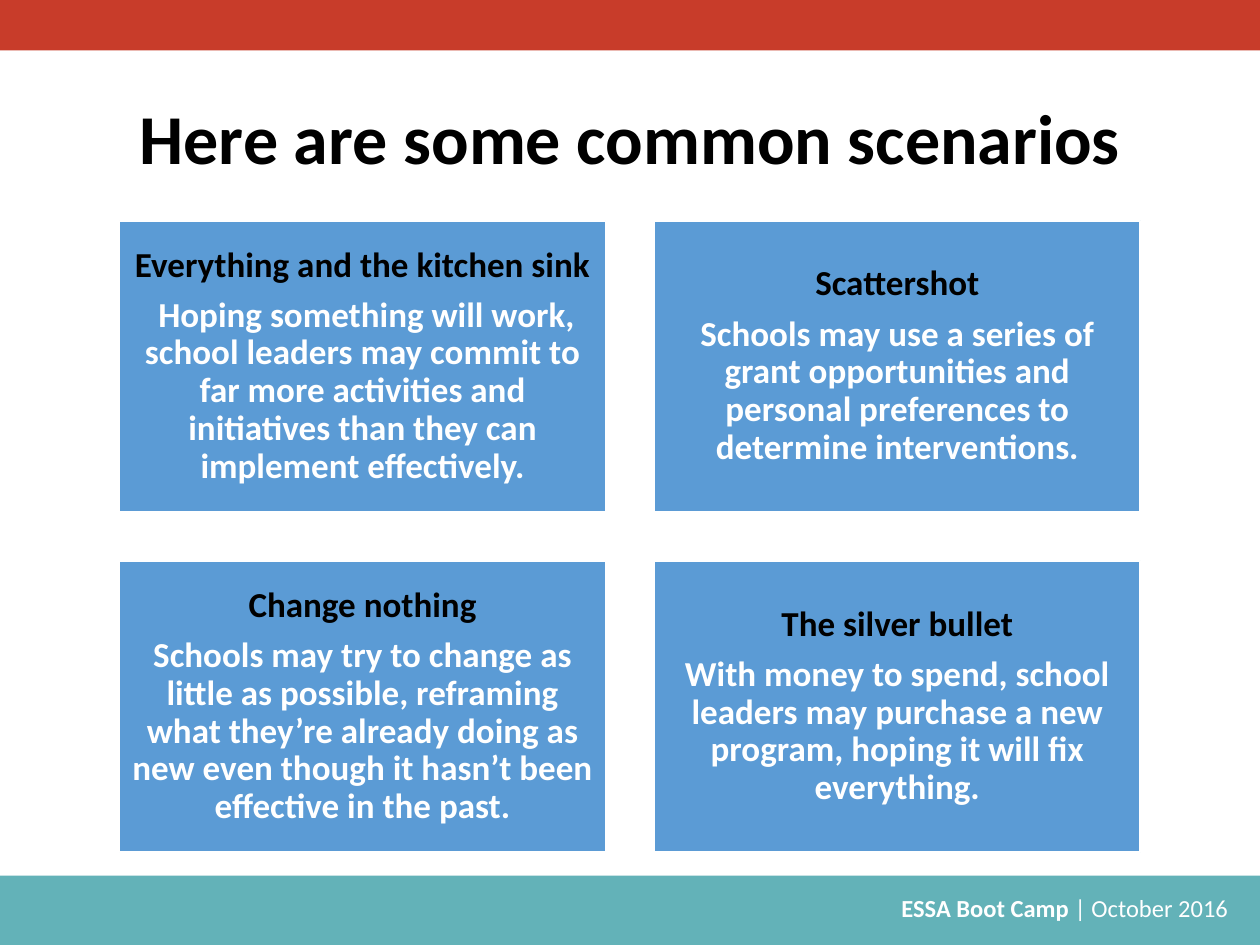
from pptx import Presentation
from pptx.dml.color import RGBColor
from pptx.enum.shapes import MSO_SHAPE
from pptx.enum.text import MSO_ANCHOR, PP_ALIGN
from pptx.util import Cm, Pt

RECT = MSO_SHAPE.RECTANGLE
MIDDLE, TOP = MSO_ANCHOR.MIDDLE, MSO_ANCHOR.TOP
CENTER, RIGHT = PP_ALIGN.CENTER, PP_ALIGN.RIGHT

# Content
TITLE = "Here are some common scenarios"
FOOTER = ("ESSA Boot Camp ", "| October 2016 ")
CARDS = [
    ("Everything and the kitchen sink",
     " Hoping something will work, school leaders may commit to far more "
     "activities and initiatives than they can implement effectively."),
    ("Scattershot",
     "Schools may use a series of grant opportunities and personal "
     "preferences to determine interventions."),
    ("Change nothing",
     "Schools may try to change as little as possible, reframing what they’re "
     "already doing as new even though it hasn’t been effective in the past."),
    ("The silver bullet",
     "With money to spend, school leaders may purchase a new program, "
     "hoping it will fix everything."),
]

THEME = {
    "font": "Calibri",
    "black": RGBColor(0x00, 0x00, 0x00),
    "white": RGBColor(0xFF, 0xFF, 0xFF),
    "red": RGBColor(0xC8, 0x3C, 0x2A),
    "teal": RGBColor(0x63, 0xB2, 0xB8),
    "blue": RGBColor(0x5B, 0x9B, 0xD5),
    "title": Pt(40),
    "body": Pt(20),
    "small": Pt(14),
}

# Layout in centimetres
WIDE, HIGH = 25.4, 19.05
COLS = 2
LEFT, UPPER = 2.41, 4.45
CARD_W, CARD_H = 9.8, 5.87
GAP_X, GAP_Y = 0.98, 0.99
INSET = 0.2


def add_bar(slide, box, color):
    bar = slide.shapes.add_shape(RECT, *map(Cm, box))
    bar.shadow.inherit = False
    bar.fill.solid()
    bar.fill.fore_color.rgb = THEME[color]
    bar.line.fill.background()
    return bar


def add_box(slide, box, anchor):
    frame = slide.shapes.add_textbox(*map(Cm, box)).text_frame
    frame.word_wrap = True
    frame.vertical_anchor = anchor
    return frame


def add_run(para, text, size, color, bold=True):
    run = para.add_run()
    run.text = text
    font = run.font
    font.name, font.size, font.bold = THEME["font"], THEME[size], bold
    font.color.rgb = THEME[color]


def add_card(slide, index, head, body):
    row, col = divmod(index, COLS)
    box = (LEFT + col * (CARD_W + GAP_X), UPPER + row * (CARD_H + GAP_Y),
           CARD_W, CARD_H)
    card = add_bar(slide, box, "blue")
    card.line.color.rgb = THEME["white"]
    card.line.width = Pt(1)
    frame = card.text_frame
    frame.word_wrap = True
    frame.vertical_anchor = MIDDLE
    frame.margin_left = frame.margin_right = Cm(INSET)
    frame.margin_top = frame.margin_bottom = Cm(INSET)
    paras = frame.paragraphs[0], frame.add_paragraph()
    for para, text, color in zip(paras, (head, body), ("black", "white")):
        para.alignment = CENTER
        para.line_spacing = 0.9
        para.space_after = Pt(7)
        add_run(para, text, "body", color)


def main():
    deck = Presentation()
    deck.slide_width, deck.slide_height = Cm(WIDE), Cm(HIGH)
    slide = deck.slides.add_slide(deck.slide_layouts[6])

    # Bands at the foot and head
    add_bar(slide, (0, 17.65, WIDE, 1.4), "teal")
    add_bar(slide, (0, 0, WIDE, 1.02), "red")

    # Footer
    para = add_box(slide, (9.14, 17.88, 15.98, 0.86), TOP).paragraphs[0]
    para.alignment = RIGHT
    for text, bold in zip(FOOTER, (True, False)):
        add_run(para, text, "small", "white", bold)

    # Title
    para = add_box(slide, (1.75, 1.02, 21.9, 3.68), MIDDLE).paragraphs[0]
    para.alignment = CENTER
    para.line_spacing = 0.9
    add_run(para, TITLE, "title", "black")

    # Scenario cards
    for index, (head, body) in enumerate(CARDS):
        add_card(slide, index, head, body)

    deck.save("out.pptx")


if __name__ == "__main__":
    main()
